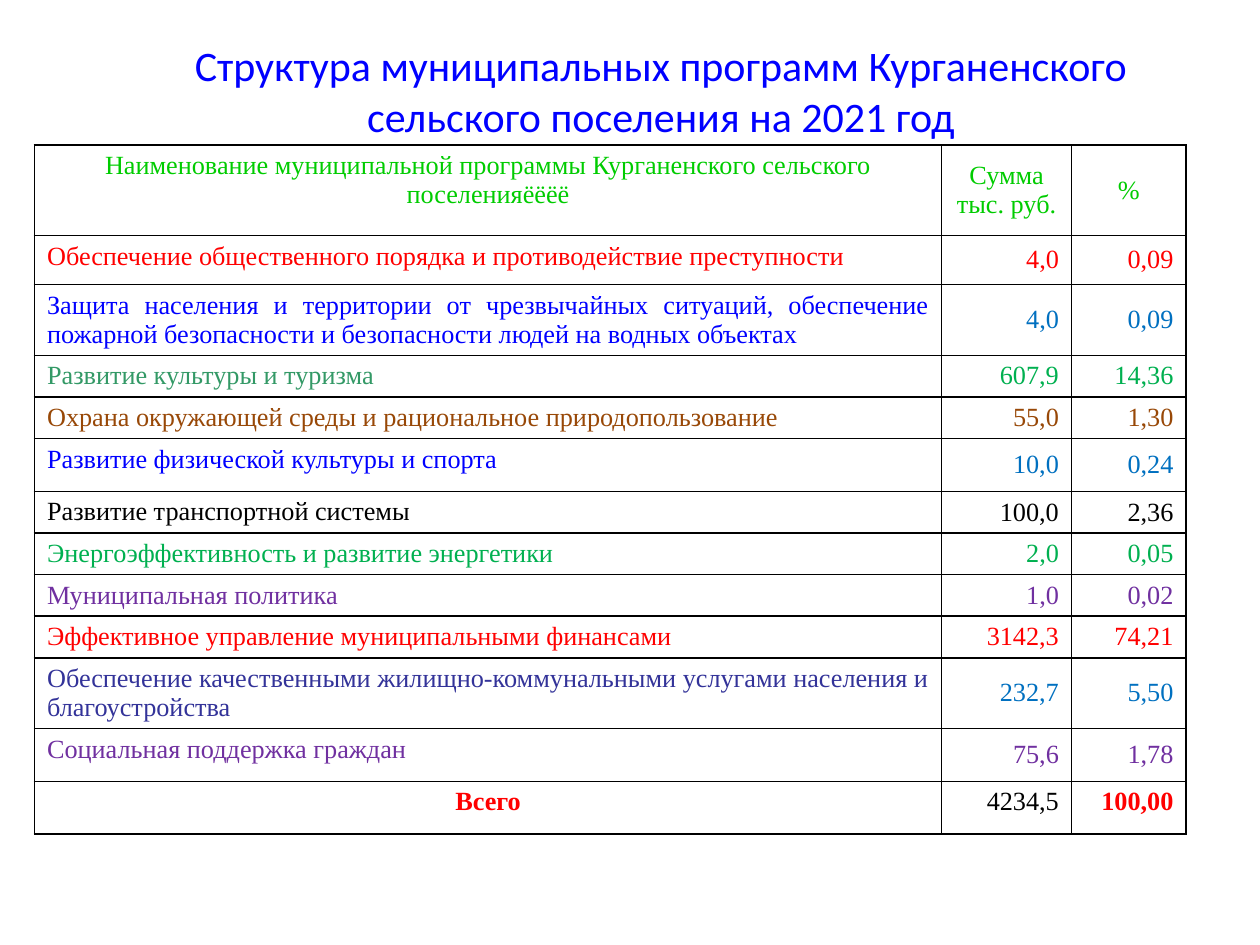
from dataclasses import dataclass
from typing import Optional

from lxml.etree import SubElement
from pptx import Presentation
from pptx.dml.color import RGBColor
from pptx.enum.text import MSO_ANCHOR as Anchor, MSO_AUTO_SIZE as AutoSize, PP_ALIGN as Align
from pptx.oxml.ns import qn
from pptx.util import Pt

BLACK = RGBColor(0x00, 0x00, 0x00)
WHITE = RGBColor(0xFF, 0xFF, 0xFF)
RED = RGBColor(0xFF, 0x00, 0x00)
BLUE = RGBColor(0x00, 0x00, 0xFF)
SKY = RGBColor(0x00, 0x70, 0xC0)
NAVY = RGBColor(0x33, 0x33, 0x99)
LIME = RGBColor(0x00, 0xCC, 0x00)
GREEN = RGBColor(0x00, 0xB0, 0x50)
SEA_GREEN = RGBColor(0x33, 0x99, 0x66)
BROWN = RGBColor(0x98, 0x48, 0x07)
PURPLE = RGBColor(0x70, 0x30, 0xA0)

TITLE = "Структура муниципальных программ Курганенского сельского поселения на 2021 год"
HEADINGS = (
    "Наименование муниципальной программы Курганенского сельского поселенияёёёё",
    "Сумма тыс. руб.",
    "%",
)
COLUMN_WIDTHS = (518.4, 74.2, 65.5)
HEADING_HEIGHT = 51.8
TOTAL_HEIGHT = 30.2


@dataclass(frozen=True)
class Program:
    name: str
    amount: str
    share: str
    height: float
    color: RGBColor
    number_color: Optional[RGBColor] = None


PROGRAMS = (
    Program("Обеспечение общественного порядка и противодействие преступности",
            "4,0", "0,09", 28.1, RED),
    Program("Защита населения и территории от чрезвычайных ситуаций, обеспечение "
            "пожарной безопасности и безопасности людей на водных объектах",
            "4,0", "0,09", 20.2, BLUE, SKY),
    Program("Развитие культуры и туризма", "607,9", "14,36", 20.2, SEA_GREEN, GREEN),
    Program("Охрана окружающей среды и рациональное природопользование",
            "55,0", "1,30", 22.3, BROWN),
    Program("Развитие физической культуры и спорта", "10,0", "0,24", 30.2, BLUE, SKY),
    Program("Развитие транспортной системы", "100,0", "2,36", 14.4, BLACK),
    Program("Энергоэффективность и развитие энергетики", "2,0", "0,05", 15.1, GREEN),
    Program("Муниципальная политика", "1,0", "0,02", 15.1, PURPLE),
    Program("Эффективное управление муниципальными финансами",
            "3142,3", "74,21", 20.9, RED),
    Program("Обеспечение качественными жилищно-коммунальными услугами населения "
            "и благоустройства", "232,7", "5,50", 20.9, NAVY, SKY),
    Program("Социальная поддержка граждан", "75,6", "1,78", 30.2, PURPLE),
)


def add_borders(cell) -> None:
    properties = cell._tc.get_or_add_tcPr()
    for position, side in enumerate(("lnL", "lnR", "lnT", "lnB")):
        line = SubElement(properties, qn(f"a:{side}"), w=str(Pt(1)))
        fill = SubElement(line, qn("a:solidFill"))
        SubElement(fill, qn("a:srgbClr"), val=str(BLACK))
        properties.remove(line)
        properties.insert(position, line)


def write_cell(cell, text: str, color: RGBColor, align: Align,
               anchor: Anchor = Anchor.MIDDLE, bold: bool = False) -> None:
    cell.text_frame.text = text
    cell.vertical_anchor = anchor
    cell.fill.solid()
    cell.fill.fore_color.rgb = WHITE
    paragraph = cell.text_frame.paragraphs[0]
    paragraph.alignment = align
    font = paragraph.runs[0].font
    font.name, font.size, font.bold = "Times New Roman", Pt(15), bold
    font.color.rgb = color
    add_borders(cell)


def add_title(slide) -> None:
    title = slide.shapes.title
    title.left, title.top, title.width, title.height = Pt(72), Pt(20.2), Pt(611.3), Pt(62.6)
    frame = title.text_frame
    frame.text = TITLE
    frame.word_wrap = True
    frame.auto_size = AutoSize.NONE
    frame.vertical_anchor = Anchor.MIDDLE
    paragraph = frame.paragraphs[0]
    paragraph.alignment = Align.CENTER
    font = paragraph.runs[0].font
    font.name, font.size = "Calibri", Pt(24)
    font.color.rgb = BLUE


def add_program_table(slide) -> None:
    heights = [HEADING_HEIGHT, *(program.height for program in PROGRAMS), TOTAL_HEIGHT]
    table = slide.shapes.add_table(
        len(heights), len(COLUMN_WIDTHS), Pt(19.7), Pt(82.8),
        Pt(sum(COLUMN_WIDTHS)), Pt(sum(heights))).table
    table.first_row = table.horz_banding = False
    for column, width in zip(table.columns, COLUMN_WIDTHS):
        column.width = Pt(width)
    for row, height in zip(table.rows, heights):
        row.height = Pt(height)

    heading_row, *program_rows, total_row = table.rows
    for index, (cell, heading) in enumerate(zip(heading_row.cells, HEADINGS)):
        anchor = Anchor.MIDDLE if index else Anchor.TOP
        write_cell(cell, heading, LIME, Align.CENTER, anchor)

    for row, program in zip(program_rows, PROGRAMS):
        name, amount, share = row.cells
        number_color = program.number_color or program.color
        write_cell(name, program.name, program.color, Align.JUSTIFY, Anchor.TOP)
        write_cell(amount, program.amount, number_color, Align.RIGHT)
        write_cell(share, program.share, number_color, Align.RIGHT)

    name, amount, share = total_row.cells
    write_cell(name, "Всего", RED, Align.CENTER, Anchor.TOP, bold=True)
    write_cell(amount, "4234,5", BLACK, Align.RIGHT, Anchor.TOP)
    write_cell(share, "100,00", RED, Align.RIGHT, Anchor.TOP, bold=True)


def main() -> None:
    deck = Presentation()
    deck.slide_width, deck.slide_height = Pt(720), Pt(540)
    slide = deck.slides.add_slide(deck.slide_layouts.get_by_name("Title Only"))
    add_title(slide)
    add_program_table(slide)
    deck.save("out.pptx")


if __name__ == "__main__":
    main()
